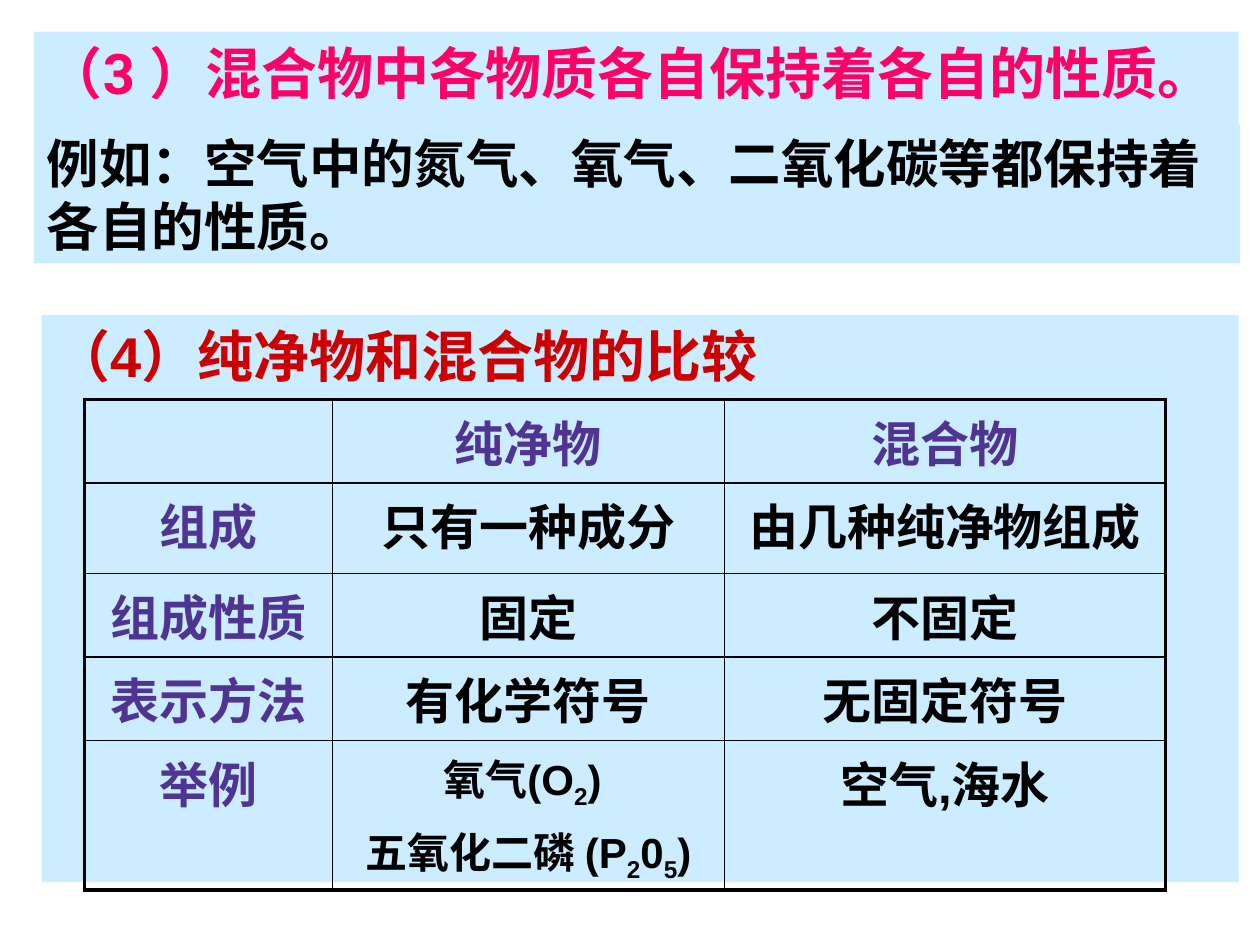
from lxml import etree
from pptx import Presentation
from pptx import util as u
from pptx.dml.color import RGBColor
from pptx.enum import text
from pptx.oxml import ns

COLORS = {
    "panel": "CCECFF",
    "pink": "FF0066",
    "red": "CC0000",
    "purple": "4F3492",
    "black": "000000",
}
COLUMN_WIDTHS = (5, 7.9, 8.9)
ROW_HEIGHTS = (1.45, 1.83, 1.57, 1.57, 2.49)
COMPARISON = (
    ("", "纯净物", "混合物"),
    ("组成", "只有一种成分", "由几种纯净物组成"),
    ("组成性质", "固定", "不固定"),
    ("表示方法", "有化学符号", "无固定符号"),
    ("举例", "氧气(O_2) \n五氧化二磷 (P_20_5)", "空气,海水"),
)


def color(name):
    return RGBColor.from_string(COLORS[name])


def set_font(para, name, size, color_name):
    for target in (para, *para.runs):
        font = target.font
        font.name = name
        font.size = u.Pt(size)
        font.bold = True
        font.color.rgb = color(color_name)


def fill_panel(box, area, wording, font_name, size, color_name):
    box.left, box.top, box.width, box.height = (u.Cm(side) for side in area)
    box.fill.solid()
    box.fill.fore_color.rgb = color("panel")
    frame = box.text_frame
    frame.word_wrap = True
    frame.auto_size = text.MSO_AUTO_SIZE.NONE
    frame.vertical_anchor = text.MSO_ANCHOR.TOP
    frame.text = wording
    para = frame.paragraphs[0]
    para.alignment = text.PP_ALIGN.LEFT
    para.space_before = u.Pt(0)
    set_font(para, font_name, size, color_name)
    return para


def remove_bullet(para, indent):
    properties = para._p.get_or_add_pPr()
    properties.set("marL", str(u.Cm(indent)))
    properties.set("indent", str(-u.Cm(indent)))
    properties.insert_element_before(
        properties.makeelement(ns.qn("a:buNone")), "a:tabLst", "a:defRPr", "a:extLst"
    )


def add_formula(para, wording):
    first, *pieces = wording.split("_")
    para.add_run().text = first
    for piece in pieces:
        digit = para.add_run()
        digit.text = piece[0]
        digit._r.get_or_add_rPr().set("baseline", "-25000")
        para.add_run().text = piece[1:]


def set_borders(cell, widths):
    properties = cell._tc.get_or_add_tcPr()
    for side, width in zip("LRTB", widths):
        line = etree.SubElement(properties, ns.qn(f"a:ln{side}"), w=str(u.Pt(width)))
        paint = etree.SubElement(line, ns.qn("a:solidFill"))
        etree.SubElement(paint, ns.qn("a:srgbClr"), val=COLORS["black"])


def fill_cell(cell, wording, color_name):
    cell.fill.background()
    if not wording:
        return
    lines = wording.split("\n")
    size = 24 if len(lines) > 1 else 28
    frame = cell.text_frame
    for number, line in enumerate(lines):
        para = frame.add_paragraph() if number else frame.paragraphs[0]
        add_formula(para, line)
        para.alignment = text.PP_ALIGN.CENTER
        para.space_before = u.Pt(size * 0.2)
        set_font(para, "Arial", size, color_name)


def add_comparison(page):
    last_row, last_column = len(ROW_HEIGHTS) - 1, len(COLUMN_WIDTHS) - 1
    table = page.shapes.add_table(
        len(ROW_HEIGHTS), len(COLUMN_WIDTHS), u.Cm(1.7), u.Cm(8.05),
        u.Cm(sum(COLUMN_WIDTHS)), u.Cm(sum(ROW_HEIGHTS)),
    ).table
    table.first_row = table.horz_banding = False
    for column, width in zip(table.columns, COLUMN_WIDTHS):
        column.width = u.Cm(width)
    for row, height in zip(table.rows, ROW_HEIGHTS):
        row.height = u.Cm(height)
    for r, entries in enumerate(COMPARISON):
        for c, wording in enumerate(entries):
            cell = table.cell(r, c)
            outer = (c == 0, c == last_column, r == 0, r == last_row)
            set_borders(cell, [2.25 if edge else 1 for edge in outer])
            fill_cell(cell, wording, "black" if r and c else "purple")


def main():
    deck = Presentation()
    deck.slide_width, deck.slide_height = u.Cm(25.4), u.Cm(19.05)
    page = deck.slides.add_slide(deck.slide_layouts[1])
    title, body = page.placeholders
    fill_panel(title, (0.69, 0.64, 24.28, 3.63),
               "（3 ）混合物中各物质各自保持着各自的性质。", "Roboto", 32, "pink")
    heading = fill_panel(body, (0.84, 6.35, 24.13, 11.43),
                         "（4）纯净物和混合物的比较", "Arial", 32, "red")
    remove_bullet(heading, 0.95)
    example = page.shapes.add_textbox(0, 0, 0, 0)
    fill_panel(example, (0.69, 2.51, 24.31, 2.8),
               "例如：空气中的氮气、氧气、二氧化碳等都保持着各自的性质。",
               "Roboto", 30, "black")
    add_comparison(page)
    deck.save("out.pptx")


if __name__ == "__main__":
    main()
